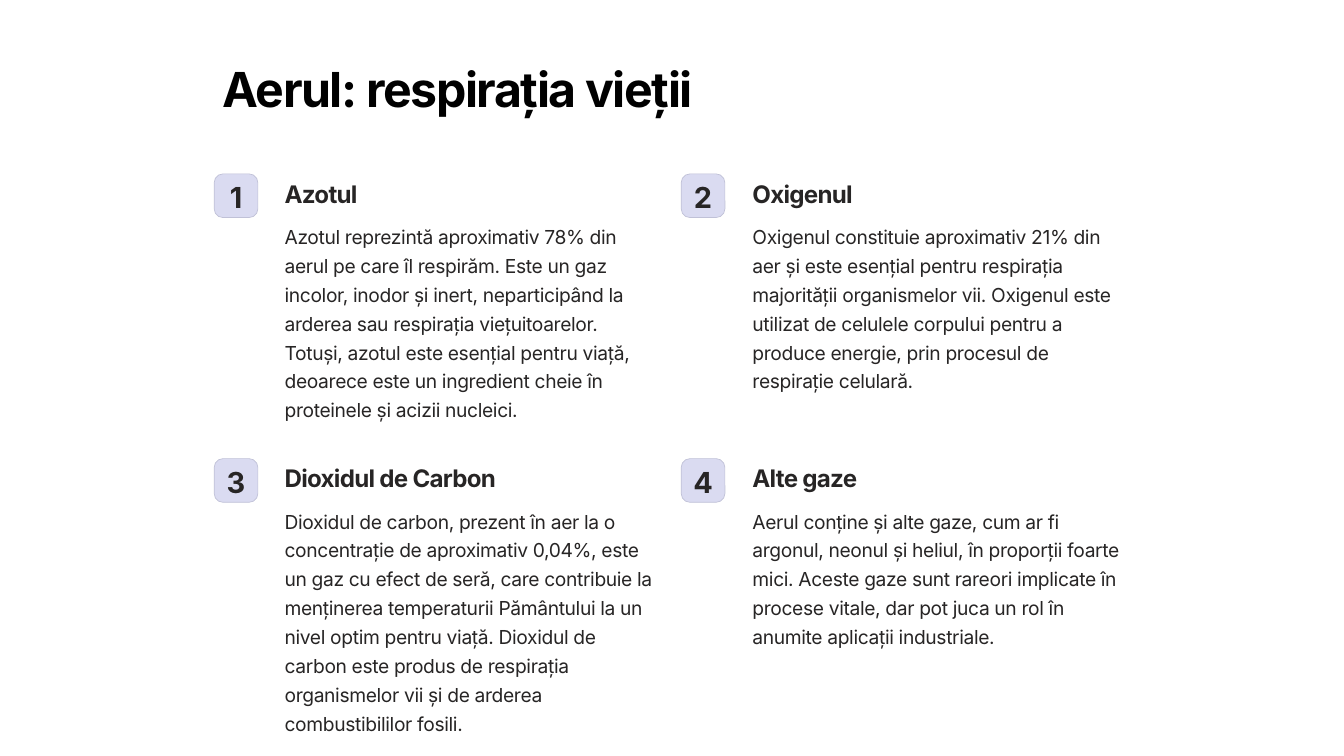
from pptx import Presentation
from pptx.dml.color import RGBColor
from pptx.enum.shapes import MSO_SHAPE
from pptx.enum.text import PP_ALIGN
from pptx.util import Inches, Pt

RECTANGLE = MSO_SHAPE.RECTANGLE
ROUNDED = MSO_SHAPE.ROUNDED_RECTANGLE
LEFT, CENTER = PP_ALIGN.LEFT, PP_ALIGN.CENTER

COLORS = {
    "white": "FFFFFF",
    "title": "000000",
    "text": "272525",
    "badge": "DADBF1",
    "badge_line": "C0C1D7",
}

# Size, line spacing and letter spacing in points, then weight and colour
STYLES = {
    "title": (41.3, 51.7, -1.2, True, "title"),
    "number": (24.8, 24.8, -0.7, True, "text"),
    "heading": (20.7, 25.8, -0.6, True, "text"),
    "body": (16.5, 24.8, -0.27, False, "text"),
}

GASES = [
    ("Azotul",
     "Azotul reprezintă aproximativ 78% din aerul pe care îl respirăm. Este un gaz "
     "incolor, inodor și inert, neparticipând la arderea sau respirația viețuitoarelor. "
     "Totuși, azotul este esențial pentru viață, deoarece este un ingredient cheie în "
     "proteinele și acizii nucleici."),
    ("Oxigenul",
     "Oxigenul constituie aproximativ 21% din aer și este esențial pentru respirația "
     "majorității organismelor vii. Oxigenul este utilizat de celulele corpului pentru a "
     "produce energie, prin procesul de respirație celulară."),
    ("Dioxidul de Carbon",
     "Dioxidul de carbon, prezent în aer la o concentrație de aproximativ 0,04%, este un "
     "gaz cu efect de seră, care contribuie la menținerea temperaturii Pământului la un "
     "nivel optim pentru viață. Dioxidul de carbon este produs de respirația organismelor "
     "vii și de arderea combustibililor fosili."),
    ("Alte gaze",
     "Aerul conține și alte gaze, cum ar fi argonul, neonul și heliul, în proporții foarte "
     "mici. Aceste gaze sunt rareori implicate în procese vitale, dar pot juca un rol în "
     "anumite aplicații industriale."),
]

COLUMNS = [(2.55, 3.29, 2.41), (8.11, 8.86, 1.72)]  # badge left, text left, body height
ROWS = [2.07, 5.46]
BADGE_SIZE = 0.52


class SlideBuilder:
    font_name = "Inter"

    def __init__(self, slide):
        self.slide = slide

    def shape(self, kind, left, top, width, height, fill, line=None):
        shape = self.slide.shapes.add_shape(
            kind, Inches(left), Inches(top), Inches(width), Inches(height))
        shape.shadow.inherit = False
        shape.fill.solid()
        shape.fill.fore_color.rgb = RGBColor.from_string(COLORS[fill])
        if line:
            shape.line.color.rgb = RGBColor.from_string(COLORS[line])
            shape.line.width = Pt(0.6)
        else:
            shape.line.fill.background()
        return shape

    def text(self, text, style, left, top, width, height, wrap=False, align=LEFT):
        size, line_spacing, letter_spacing, bold, color = STYLES[style]
        box = self.slide.shapes.add_textbox(
            Inches(left), Inches(top), Inches(width), Inches(height))
        box.text_frame.word_wrap = wrap
        para = box.text_frame.paragraphs[0]
        para.text = text
        para.alignment = align
        para.line_spacing = Pt(line_spacing)
        span = para.runs[0]
        span.font.name = self.font_name
        span.font.size = Pt(size)
        span.font.bold = bold
        span.font.color.rgb = RGBColor.from_string(COLORS[color])
        span.font._element.set("spc", str(round(letter_spacing * 100)))

    def gas(self, number, heading, body, column, top):
        left, text_left, body_height = column
        badge = self.shape(ROUNDED, left, top, BADGE_SIZE, BADGE_SIZE,
                           "badge", "badge_line")
        badge.adjustments[0] = 0.2
        self.text(str(number), "number", left, top + 0.09, BADGE_SIZE, 0.34,
                  align=CENTER)
        self.text(heading, "heading", text_left, top, 2.87, 0.36)
        self.text(body, "body", text_left, top + 0.49, 4.59, body_height, wrap=True)


def main():
    deck = Presentation()
    deck.slide_width, deck.slide_height = Inches(16), Inches(9)
    page = SlideBuilder(deck.slides.add_slide(deck.slide_layouts[6]))

    # Background and title
    page.shape(RECTANGLE, 0, 0, 16, 9, "white")
    page.text("Aerul: respirația vieții", "title", 2.55, 0.63, 6.2, 0.72)

    # Two by two grid of gases
    for index, (heading, body) in enumerate(GASES):
        row, column = divmod(index, len(COLUMNS))
        page.gas(index + 1, heading, body, COLUMNS[column], ROWS[row])

    deck.save("out.pptx")


if __name__ == "__main__":
    main()
